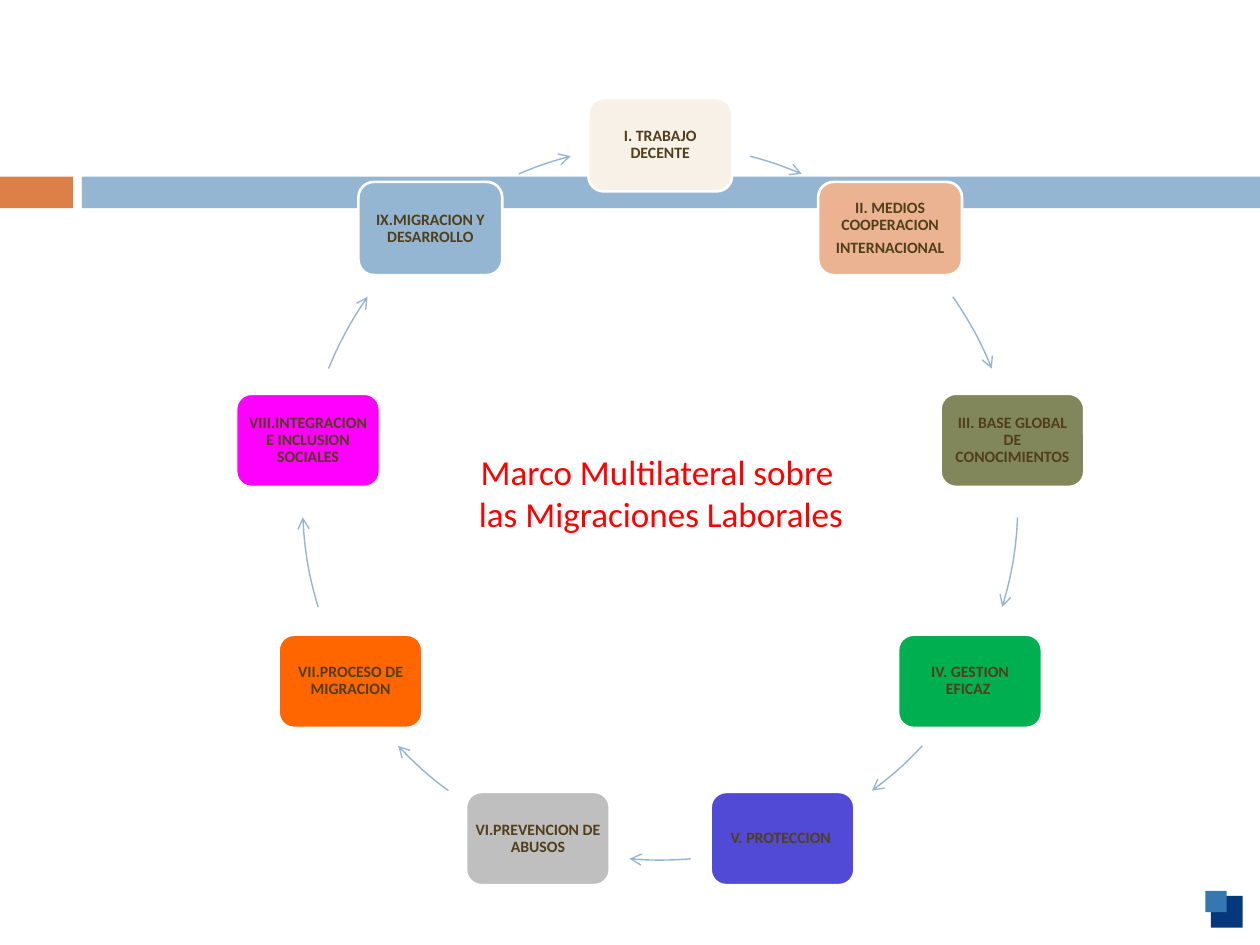
"""Build a slide with a nine-step cycle around a central title."""
from math import cos, radians, sin

from lxml import etree
from pptx import Presentation
from pptx.dml.color import RGBColor
from pptx.enum.shapes import MSO_SHAPE
from pptx.enum.text import MSO_ANCHOR, MSO_AUTO_SIZE, PP_ALIGN
from pptx.oxml.ns import qn
from pptx.util import Cm, Pt

RECTANGLE = MSO_SHAPE.RECTANGLE
ROUNDED = MSO_SHAPE.ROUNDED_RECTANGLE
ARC = MSO_SHAPE.ARC
MIDDLE = MSO_ANCHOR.MIDDLE
NO_FIT = MSO_AUTO_SIZE.NONE
CENTER = PP_ALIGN.CENTER

WHITE = RGBColor(0xFF, 0xFF, 0xFF)
RED = RGBColor(0xFF, 0x00, 0x00)
BROWN = RGBColor(0x51, 0x3E, 0x1B)
SKY = RGBColor(0x94, 0xB6, 0xD2)
RUST = RGBColor(0xDD, 0x80, 0x47)
CREAM = RGBColor(0xF7, 0xF1, 0xE7)
PEACH = RGBColor(0xEB, 0xB3, 0x91)
OLIVE = RGBColor(0x81, 0x87, 0x5A)
GREEN = RGBColor(0x00, 0xB0, 0x50)
VIOLET = RGBColor(0x51, 0x4A, 0xD6)
GRAY = RGBColor(0xBF, 0xBF, 0xBF)
ORANGE = RGBColor(0xFF, 0x66, 0x00)
MAGENTA = RGBColor(0xFF, 0x00, 0xFF)
NAVY = RGBColor(0x05, 0x37, 0x7C)
BLUE = RGBColor(0x35, 0x77, 0xB0)

CENTER_X, CENTER_Y, RADIUS = 13.31, 10.13, 7.21
STEP_WIDTH, STEP_HEIGHT = 2.9, 1.88

STEPS = [
    (["I. TRABAJO DECENTE"], CREAM),
    (["II. MEDIOS COOPERACION", "INTERNACIONAL"], PEACH),
    (["III. BASE GLOBAL DE CONOCIMIENTOS"], OLIVE),
    (["IV. GESTION EFICAZ "], GREEN),
    (["V. PROTECCION "], VIOLET),
    (["VI.PREVENCION DE ABUSOS"], GRAY),
    (["VII.PROCESO DE MIGRACION"], ORANGE),
    (["VIII.INTEGRACION E INCLUSION SOCIALES"], MAGENTA),
    (["IX.MIGRACION Y DESARROLLO"], SKY),
]
RIGHT_ARCS = [(14.5, 23.3), (54.9, 68), (92.4, 107), (132.9, 143.7)]
BOTTOM_ARC = (175.1, 184.9)
LEFT_ARCS = [(360 - end, 360 - start) for start, end in reversed(RIGHT_ARCS)]
BANDS = [(0, 3.56, 1.47, 0.64, RUST), (1.65, 3.56, 23.75, 0.64, SKY)]
CORNER_SQUARES = [(24.41, 18.06, 0.64, 0.64, NAVY), (24.3, 17.96, 0.43, 0.43, BLUE)]


def write_text(frame, lines, *, size, color, bold=False, spacing=None, after=0):
    """Fill a text frame with centred paragraphs."""
    frame.word_wrap = True
    frame.auto_size = NO_FIT
    frame.vertical_anchor = MIDDLE
    for index, line in enumerate(lines):
        para = frame.add_paragraph() if index else frame.paragraphs[0]
        para.text = line
        para.alignment = CENTER
        para.line_spacing = spacing
        para.space_after = Pt(after)
        for span in para.runs:
            span.font.name = "Calibri"
            span.font.size = Pt(size)
            span.font.bold = bold
            span.font.color.rgb = color


class CycleSlide:
    """Hold the current page and the shared look of its elements."""

    def __init__(self, deck):
        self.page = deck.slides.add_slide(deck.slide_layouts[5])

    def title(self, text):
        """Place the title in the middle of the cycle."""
        box = self.page.shapes.title
        box.left, box.top = Cm(6.76), Cm(8.33)
        box.width, box.height = Cm(13.13), Cm(3.18)
        write_text(box.text_frame, [text], size=20, color=RED)

    def block(self, left, top, width, height, color, kind=RECTANGLE):
        """Add a filled shape without an outline."""
        box = self.page.shapes.add_shape(kind, Cm(left), Cm(top), Cm(width), Cm(height))
        box.shadow.inherit = False
        box.fill.solid()
        box.fill.fore_color.rgb = color
        box.line.fill.background()
        return box

    def step(self, angle, lines, color):
        """Add a step at an angle measured clockwise from the top."""
        left = CENTER_X + RADIUS * sin(radians(angle)) - STEP_WIDTH / 2
        top = CENTER_Y - RADIUS * cos(radians(angle)) - STEP_HEIGHT / 2
        box = self.block(left, top, STEP_WIDTH, STEP_HEIGHT, color, ROUNDED)
        box.line.color.rgb = WHITE
        box.line.width = Pt(1.5)
        frame = box.text_frame
        frame.margin_left = frame.margin_right = Cm(0.1)
        frame.margin_top = frame.margin_bottom = Cm(0.1)
        write_text(frame, lines, size=9, color=BROWN, bold=True, spacing=0.9, after=3.15)

    def arrow(self, start, end):
        """Add a curved arrow between two angles measured from the top."""
        curve = self.page.shapes.add_shape(
            ARC, Cm(CENTER_X - RADIUS), Cm(CENTER_Y - RADIUS), Cm(2 * RADIUS), Cm(2 * RADIUS))
        curve.shadow.inherit = False
        curve.fill.background()
        for index, angle in enumerate((start, end)):
            curve.adjustments[index] = (angle - 90) % 360 * 0.6
        curve.line.color.rgb = SKY
        curve.line.width = Pt(0.79)
        outline = curve.line.fill._xPr
        etree.SubElement(outline, qn("a:tailEnd"), type="arrow")


def main():
    """Build and save the deck."""
    deck = Presentation()
    deck.slide_width, deck.slide_height = Cm(25.4), Cm(19.05)
    slide = CycleSlide(deck)
    for band in BANDS:
        slide.block(*band)
    slide.title("Marco Multilateral sobre \vlas Migraciones Laborales")
    arcs = RIGHT_ARCS + [BOTTOM_ARC] + LEFT_ARCS
    for index, ((lines, color), arc) in enumerate(zip(STEPS, arcs)):
        slide.step(index * 360 / len(STEPS), lines, color)
        slide.arrow(*arc)
    for square in CORNER_SQUARES:
        slide.block(*square)
    deck.save("out.pptx")


if __name__ == "__main__":
    main()
